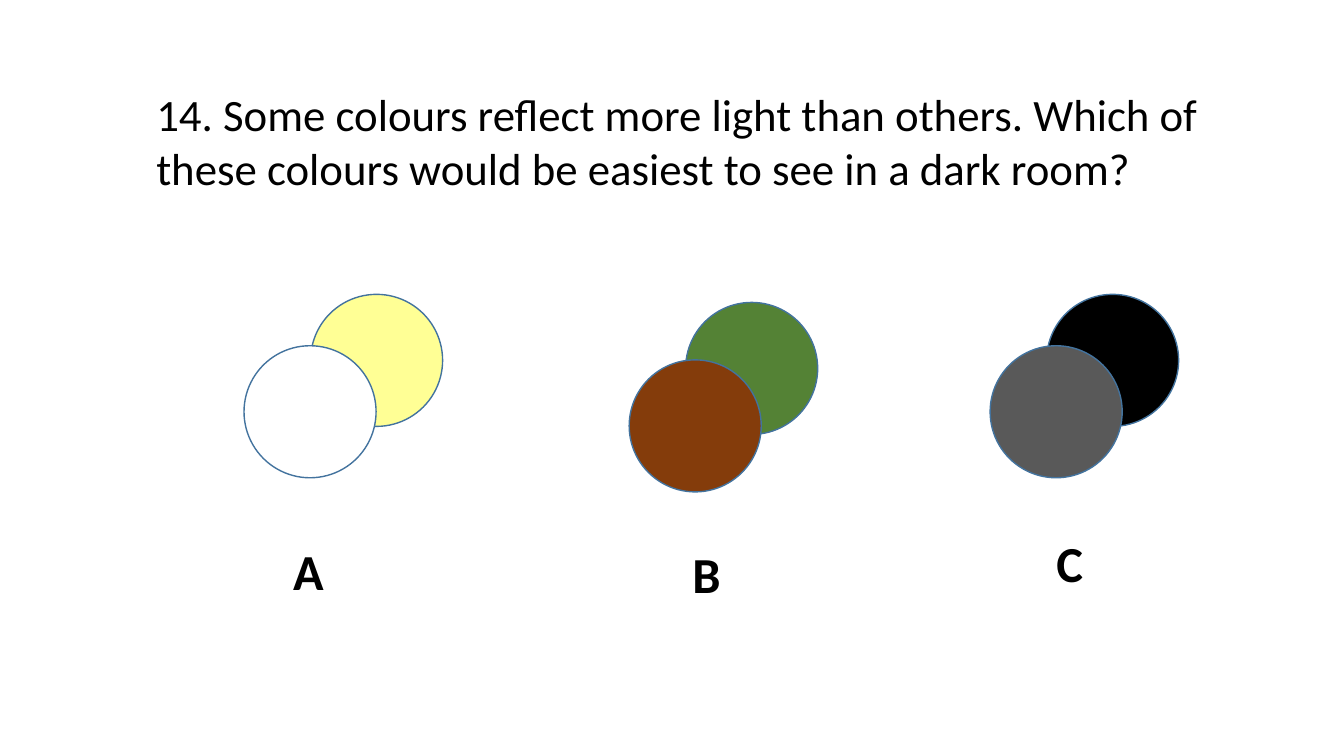
from dataclasses import dataclass

from lxml.etree import SubElement
from pptx import Presentation
from pptx.dml.color import RGBColor
from pptx.enum.shapes import MSO_SHAPE
from pptx.enum.text import MSO_ANCHOR, MSO_AUTO_SIZE, PP_ALIGN
from pptx.oxml.ns import qn
from pptx.slide import Slide
from pptx.text.text import TextFrame
from pptx.util import Emu, Inches, Pt

BLACK = RGBColor(0x00, 0x00, 0x00)
WHITE = RGBColor(0xFF, 0xFF, 0xFF)
YELLOW = RGBColor(0xFF, 0xFF, 0x66)
GREEN = RGBColor(0x54, 0x82, 0x35)
BROWN = RGBColor(0x84, 0x3C, 0x0B)
GREY = RGBColor(0x59, 0x59, 0x59)
EDGE = RGBColor(0x43, 0x73, 0x9E)

FONT = "Calibri"
CELL = Inches(0.1)  # one column or row of the grid
SIZE = 13.1  # diameter of a disc, in cells
QUESTION = (
    "14. Some colours reflect more light than others. "
    "Which of these colours would be easiest to see in a dark room?"
)


@dataclass(frozen=True)
class Disc:
    col: float
    row: float
    fill: RGBColor
    alpha: int = 100


@dataclass(frozen=True)
class Choice:
    letter: str
    col: float
    row: float
    width: float
    back: Disc
    front: Disc


CHOICES = (
    Choice("A", 28.1, 53.1, 13.1,
           Disc(30.8, 29.2, YELLOW, 69), Disc(24.2, 34.3, WHITE)),
    Choice("B", 67.7, 53.4, 13.3,
           Disc(68, 30, GREEN), Disc(62.4, 35.7, BROWN)),
    Choice("C", 103.8, 52.3, 13.7,
           Disc(103.8, 29.2, BLACK), Disc(98.2, 34.3, GREY)),
)


def cells(*counts: float) -> list[Emu]:
    return [Emu(round(count * CELL)) for count in counts]


def write(frame: TextFrame, text: str, size: int, bold: bool) -> None:
    frame.word_wrap = True
    frame.auto_size = MSO_AUTO_SIZE.SHAPE_TO_FIT_TEXT
    frame.vertical_anchor = MSO_ANCHOR.TOP
    frame.text = text
    line = frame.paragraphs[0]
    line.alignment = PP_ALIGN.LEFT
    line.font.name = FONT
    line.font.size = Pt(size)
    line.font.bold = bold
    line.font.color.rgb = BLACK


def add_title(slide: Slide) -> None:
    title = slide.shapes.title
    title.left, title.top, title.width, title.height = cells(
        14.5, 8.1, 114.7, 11.8)
    write(title.text_frame, QUESTION, 32, False)


def add_disc(slide: Slide, disc: Disc) -> None:
    shape = slide.shapes.add_shape(
        MSO_SHAPE.OVAL, *cells(disc.col, disc.row, SIZE, SIZE))
    shape.shadow.inherit = False
    shape.fill.solid()
    shape.fill.fore_color.rgb = disc.fill
    shape.line.color.rgb = EDGE
    shape.line.width = Pt(1)
    if disc.alpha < 100:
        tint = shape.fill._xPr.find(qn("a:solidFill"))[0]
        SubElement(tint, qn("a:alpha"), val=str(disc.alpha * 1000))


def add_choice(slide: Slide, choice: Choice) -> None:
    add_disc(slide, choice.back)
    add_disc(slide, choice.front)
    box = slide.shapes.add_textbox(
        *cells(choice.col, choice.row, choice.width, 7.1))
    write(box.text_frame, choice.letter, 36, True)


def main() -> None:
    deck = Presentation()
    deck.slide_width, deck.slide_height = Inches(13.33), Inches(7.5)
    slide = deck.slides.add_slide(deck.slide_layouts.get_by_name("Title Only"))
    add_title(slide)
    for choice in CHOICES:
        add_choice(slide, choice)
    deck.save("out.pptx")


if __name__ == "__main__":
    main()
